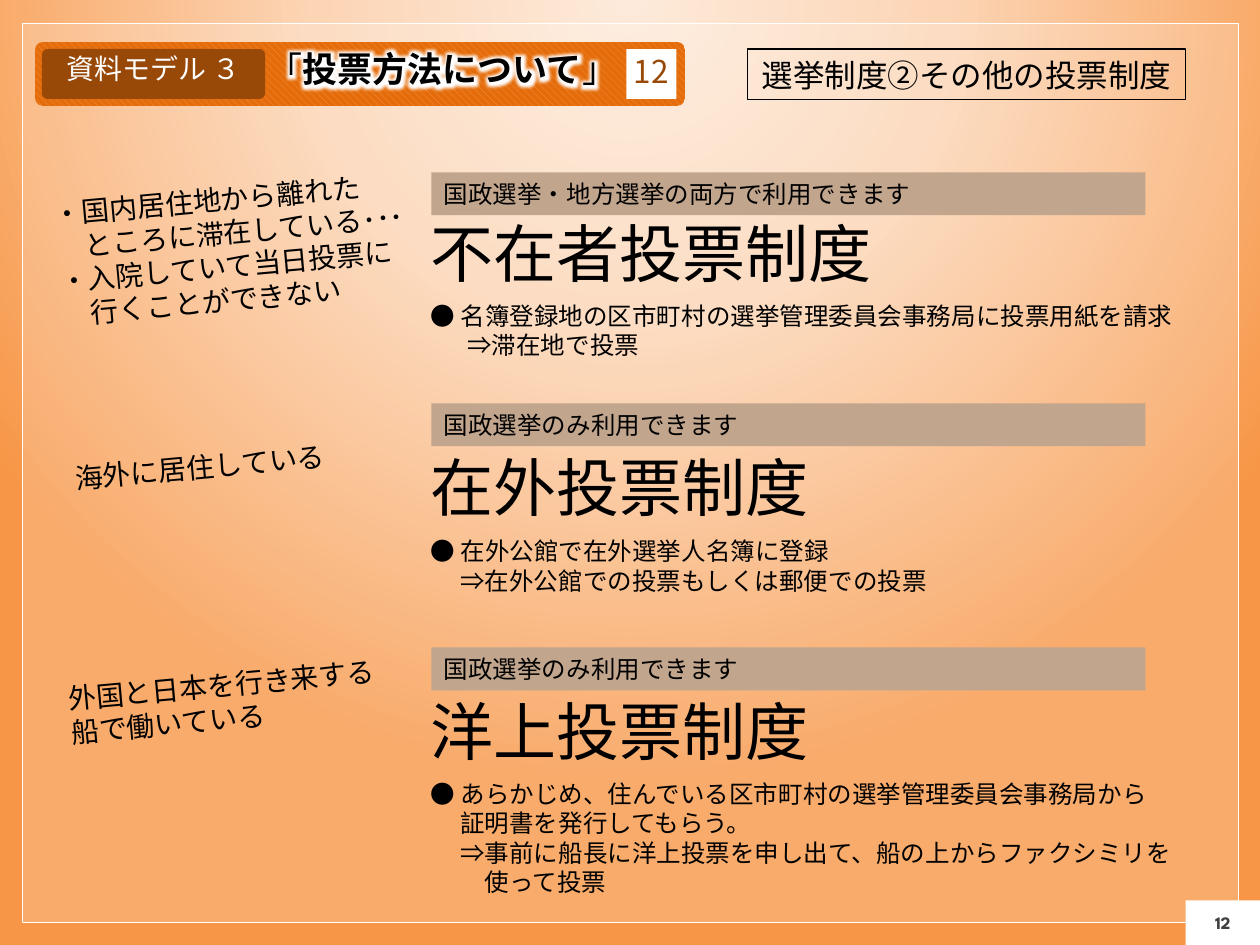
from collections import namedtuple
from dataclasses import dataclass

from lxml.etree import SubElement
from pptx import Presentation
from pptx.dml.color import RGBColor
from pptx.enum.dml import MSO_PATTERN
from pptx.enum.shapes import MSO_SHAPE
from pptx.enum.text import MSO_ANCHOR, MSO_AUTO_SIZE, PP_ALIGN
from pptx.oxml import parse_xml
from pptx.oxml.ns import nsdecls, qn
from pptx.util import Pt

Box = namedtuple("Box", "left top width height")
Line = namedtuple("Line", "text indent", defaults=(0,))
Section = namedtuple("Section", "box scope heading heading_top details details_top")
Note = namedtuple("Note", "box lines")


@dataclass(frozen=True)
class Theme:
    """Colours, fonts and type sizes of the slide."""
    body_font: str = "Noto Sans CJK JP"
    number_font: str = "League Spartan"
    ink: str = "000000"
    paper: str = "FFFFFF"
    grey: str = "404040"
    brown: str = "984807"
    tan: str = "C1A58D"
    orange: str = "F79646"
    deep_orange: str = "E46C0A"
    glow: tuple = ((0, "FDEADA"), (40, "FCD5B5"), (100, "F79646"))
    heading: int = 36
    title: int = 20
    topic: int = 18
    note: int = 16
    detail: int = 14
    page_number: int = 10


THEME = Theme()
BADGE_INSETS = (9, 3, 9, 9)
TITLE_INSETS = (0, 3, 0, 9)
TEXT_INSETS = (7.2, 3.6, 7.2, 3.6)

SECTIONS = (
    Section(Box(239, 98.5, 468, 111), "国政選挙・地方選挙の両方で利用できます",
            "不在者投票制度", 20.5,
            (Line("● 名簿登録地の区市町村の選挙管理委員会事務局に投票用紙を請求"),
             Line("⇒滞在地で投票", 21)), 70),
    Section(Box(239, 230.5, 468, 114), "国政選挙のみ利用できます",
            "在外投票制度", 22,
            (Line("● 在外公館で在外選挙人名簿に登録"),
             Line("⇒在外公館での投票もしくは郵便での投票", 17)), 72.5),
    Section(Box(239, 370, 468, 146), "国政選挙のみ利用できます",
            "洋上投票制度", 22,
            (Line("● あらかじめ、住んでいる区市町村の選挙管理委員会事務局から"),
             Line("証明書を発行してもらう。", 17),
             Line("⇒事前に船長に洋上投票を申し出て、船の上からファクシミリを", 17),
             Line("使って投票", 31)), 71.5),
)

NOTES = (
    Note(Box(26, 100, 217, 85),
         (Line("・国内居住地から離れた"), Line("ところに滞在している･･･", 16),
          Line("・入院していて当日投票に"), Line("行くことができない", 16))),
    Note(Box(35.5, 252, 192, 26.5), (Line("海外に居住している"),)),
    Note(Box(32.5, 378, 192, 46),
         (Line("外国と日本を行き来する"), Line("船で働いている"))),
)


def color(code):
    """Turn a hex code into a colour."""
    return RGBColor.from_string(code)


def place(shape, box):
    """Move and size a shape to fill a box."""
    shape.left, shape.top, shape.width, shape.height = map(Pt, box)


def add_panel(page, box, fill=None, line=None, line_width=0.75,
              kind=MSO_SHAPE.RECTANGLE, corner=None):
    """Add a flat preset shape."""
    panel = page.shapes.add_shape(kind, *map(Pt, box))
    panel.shadow.inherit = False
    if corner is not None:
        panel.adjustments[0] = corner
    if fill:
        panel.fill.solid()
        panel.fill.fore_color.rgb = color(fill)
    else:
        panel.fill.background()
    if line:
        panel.line.color.rgb = color(line)
        panel.line.width = Pt(line_width)
    else:
        panel.line.fill.background()
    return panel


def set_frame(shape, wrap, anchor, insets):
    """Set how text sits in its shape."""
    frame = shape.text_frame
    frame.word_wrap = wrap
    frame.auto_size = MSO_AUTO_SIZE.NONE
    frame.vertical_anchor = anchor
    (frame.margin_left, frame.margin_top,
     frame.margin_right, frame.margin_bottom) = map(Pt, insets)
    return frame


def style(para, size, ink, align, font=THEME.body_font, bold=False):
    """Format a whole paragraph."""
    para.alignment = align
    para.font.size = Pt(size)
    para.font.bold = bold
    para.font.color.rgb = color(ink)
    para.font.name = font
    defaults = para._p.get_or_add_pPr().find(qn("a:defRPr"))
    SubElement(defaults, qn("a:ea")).set("typeface", font)


def write_lines(shape, lines, size, align=PP_ALIGN.LEFT):
    """Write wrapped lines, each with its own indent."""
    frame = set_frame(shape, True, MSO_ANCHOR.TOP, TEXT_INSETS)
    for index, line in enumerate(lines):
        para = frame.add_paragraph() if index else frame.paragraphs[0]
        para.text = line.text
        style(para, size, THEME.ink, align)
        para._p.get_or_add_pPr().set("marL", str(Pt(line.indent)))


def write_label(shape, text, size, ink, insets=TEXT_INSETS, **font):
    """Write one centred line."""
    para = set_frame(shape, False, MSO_ANCHOR.MIDDLE, insets).paragraphs[0]
    para.text = text
    style(para, size, ink, PP_ALIGN.CENTER, **font)


def add_background(page, box):
    """Draw the radial backdrop and its pale inner frame."""
    backdrop = add_panel(page, box)
    stops = "".join(f'<a:gs pos="{at * 1000}"><a:srgbClr val="{code}"/></a:gs>'
                    for at, code in THEME.glow)
    gradient = parse_xml(
        f'<a:gradFill {nsdecls("a")} rotWithShape="1"><a:gsLst>{stops}</a:gsLst>'
        '<a:path path="circle"><a:fillToRect l="50000" r="50000" b="100000"/>'
        '</a:path></a:gradFill>')
    properties = backdrop.element.spPr
    properties.replace(properties.find(qn("a:noFill")), gradient)
    inner = Box(box.left + 13, box.top + 13.5, box.width - 25.5, box.height - 26.5)
    frame = add_panel(page, inner, THEME.paper, THEME.paper, 0.5)
    tint = frame.element.spPr.find(qn("a:solidFill")).find(qn("a:srgbClr"))
    SubElement(tint, qn("a:alpha")).set("val", "20000")


def add_title(page, box):
    """Put the slide title with its white glow above the ribbon."""
    title = page.shapes.title
    title.element.getparent().append(title.element)
    place(title, box)
    para = set_frame(title, False, MSO_ANCHOR.MIDDLE, TITLE_INSETS).paragraphs[0]
    style(para, THEME.title, THEME.ink, PP_ALIGN.CENTER)
    for text, bold in (("「", False), ("投票方法について", True), ("」", False)):
        span = para.add_run()
        span.text = text
        span.font.bold = bold
        span.font._element.append(parse_xml(
            f'<a:effectLst {nsdecls("a")}><a:glow rad="{Pt(8)}">'
            f'<a:srgbClr val="{THEME.paper}"/></a:glow></a:effectLst>'))


def add_ribbon(page, box):
    """Draw the title ribbon with its badge and number."""
    ribbon = add_panel(page, box, kind=MSO_SHAPE.ROUNDED_RECTANGLE, corner=0.124)
    ribbon.fill.patterned()
    ribbon.fill.pattern = MSO_PATTERN.WIDE_DOWNWARD_DIAGONAL
    ribbon.fill.fore_color.rgb = color(THEME.orange)
    ribbon.fill.back_color.rgb = color(THEME.deep_orange)
    top, height = box.top + 4, 28.5
    badge = add_panel(page, Box(box.left + 4, top, 127.5, height), THEME.brown,
                      kind=MSO_SHAPE.ROUNDED_RECTANGLE, corner=0.109)
    write_label(badge, "資料モデル ３", THEME.note, THEME.paper, BADGE_INSETS)
    add_title(page, Box(box.left + 128, top, 209.5, height))
    number = add_panel(page, Box(box.left + 338, top, height, height), THEME.paper)
    write_label(number, "12", THEME.topic, THEME.brown, (0, 0, 0, 3))


def add_section(page, section):
    """Place a scope bar, a heading and details in the section's box."""
    left, top, width, height = section.box
    bar = add_panel(page, Box(left + 7.5, top, 408, 24.5), THEME.tan)
    write_lines(bar, (Line(section.scope),), THEME.detail)
    heading = page.shapes.add_textbox(
        *map(Pt, (left, top + section.heading_top, 415.5, 51)))
    write_lines(heading, (Line(section.heading),), THEME.heading, PP_ALIGN.JUSTIFY)
    details = page.shapes.add_textbox(
        *map(Pt, (left, top + section.details_top, width, height - section.details_top)))
    write_lines(details, section.details, THEME.detail)


def add_note(page, note):
    """Place a tilted note saying who the system is for."""
    shape = page.shapes.add_textbox(*map(Pt, note.box))
    shape.rotation = 354.8
    write_lines(shape, note.lines, THEME.note)


def main():
    """Build the slide and save the deck."""
    deck = Presentation()
    deck.slide_width, deck.slide_height = Pt(720), Pt(540)
    page = deck.slides.add_slide(deck.slide_layouts[5])
    add_background(page, Box(0, 0, 720, 540))
    corner = add_panel(page, Box(677.5, 514.5, 42.5, 25.5), THEME.paper)
    write_label(corner, "12", THEME.page_number, THEME.grey, (3, 3, 3, 3),
                font=THEME.number_font, bold=True)
    topic = add_panel(page, Box(427, 28, 250.5, 29), line=THEME.ink)
    write_label(topic, "選挙制度②その他の投票制度", THEME.topic, THEME.ink)
    add_ribbon(page, Box(20, 24, 371.5, 36.5))
    for section in SECTIONS:
        add_section(page, section)
    for note in NOTES:
        add_note(page, note)
    deck.save("out.pptx")


if __name__ == "__main__":
    main()
